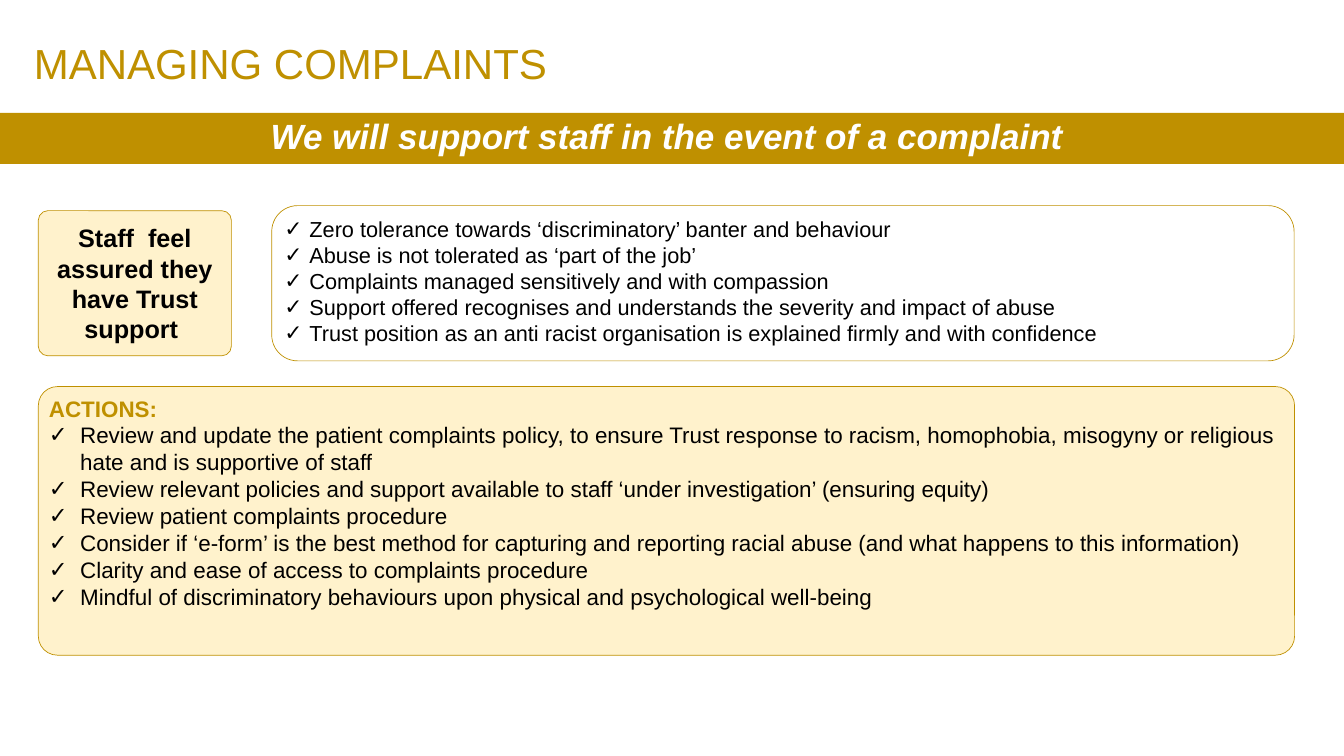
from lxml import etree
from pptx import Presentation
from pptx.dml.color import RGBColor
from pptx.enum.shapes import MSO_SHAPE
from pptx.enum.text import MSO_ANCHOR, PP_ALIGN
from pptx.oxml.ns import qn
from pptx.util import Inches, Pt

RECT, ROUND = MSO_SHAPE.RECTANGLE, MSO_SHAPE.ROUNDED_RECTANGLE
TOP, MIDDLE = MSO_ANCHOR.TOP, MSO_ANCHOR.MIDDLE
LEFT, CENTER = PP_ALIGN.LEFT, PP_ALIGN.CENTER

COLORS = {"gold": "BF9000", "cream": "FFF2CC", "black": "000000", "white": "FFFFFF"}
FONT = "Arial"

AIMS = [
    "Zero tolerance towards ‘discriminatory’ banter and behaviour",
    "Abuse is not tolerated as ‘part of the job’",
    "Complaints managed sensitively and with compassion",
    "Support offered recognises and understands the severity and impact of abuse",
    "Trust position as an anti racist organisation is explained firmly and with confidence",
]
ACTIONS = [
    "Review and update the patient complaints policy, to ensure Trust response to racism, "
    "homophobia, misogyny or religious hate and is supportive of staff",
    "Review relevant policies and support available to staff ‘under investigation’ (ensuring equity)",
    "Review patient complaints procedure",
    "Consider if ‘e-form’ is the best method for capturing and reporting racial abuse "
    "(and what happens to this information)",
    "Clarity and ease of access to complaints procedure",
    "Mindful of discriminatory behaviours upon physical and psychological well-being",
]


def color(name):
    return RGBColor.from_string(COLORS[name])


def add_run(para, text, size, ink="black", bold=False, italic=False):
    run = para.add_run()
    run.text = text
    font = run.font
    font.name, font.size = FONT, Pt(size)
    font.bold, font.italic = bold, italic
    font.color.rgb = color(ink)


def add_box(slide, kind, box, fill=None, line=None, round_by=None, anchor=MIDDLE):
    """Draw a panel and return its text frame."""
    shape = slide.shapes.add_shape(kind, *map(Inches, box))
    shape.shadow.inherit = False
    if round_by is not None:
        shape.adjustments[0] = round_by
    if fill:
        shape.fill.solid()
        shape.fill.fore_color.rgb = color(fill)
    else:
        shape.fill.background()
    if line:
        shape.line.color.rgb = color(line)
        shape.line.width = Pt(1)
    else:
        shape.line.fill.background()
    frame = shape.text_frame
    frame.word_wrap = True
    frame.vertical_anchor = anchor
    return frame


def add_ticks(frame, items, size, indent):
    """Fill the frame with ticked items, after any text already there."""
    for item in items:
        first = frame.paragraphs[0]
        para = frame.add_paragraph() if first.runs else first
        para.alignment = LEFT
        props = para._p.get_or_add_pPr()
        props.set("marL", str(Inches(indent)))
        props.set("indent", str(-Inches(indent)))
        etree.SubElement(props, qn("a:buFont"), typeface=FONT)
        etree.SubElement(props, qn("a:buChar"), char="✓")
        add_run(para, item, size)


def add_title(slide, text):
    title = slide.shapes.title
    title.left, title.top = Inches(0.57), Inches(0.28)
    title.width, title.height = Inches(25.3), Inches(2.05)
    frame = title.text_frame
    frame.word_wrap = True
    frame.vertical_anchor = MIDDLE
    para = frame.paragraphs[0]
    para.alignment = LEFT
    para.line_spacing = 0.9
    add_run(para, text, 60, "gold")


def main():
    deck = Presentation()
    deck.slide_width, deck.slide_height = Inches(26.66), Inches(15)
    slide = deck.slides.add_slide(deck.slide_layouts[5])

    # Actions panel
    frame = add_box(slide, ROUND, (0.76, 7.67, 24.92, 5.33), "cream", "gold", 0.071, TOP)
    head = frame.paragraphs[0]
    head.alignment = LEFT
    add_run(head, "ACTIONS:", 32, "gold", bold=True)
    add_ticks(frame, ACTIONS, 32, 0.62)

    # Aims panel
    frame = add_box(slide, ROUND, (5.39, 4.08, 20.28, 3.08), line="gold", anchor=TOP)
    add_ticks(frame, AIMS, 31, 0.5)

    # Outcome card
    frame = add_box(slide, ROUND, (0.76, 4.18, 3.83, 2.88), "cream", "gold", 0.066)
    para = frame.paragraphs[0]
    para.alignment = CENTER
    add_run(para, "Staff  feel assured they have Trust support ", 36, bold=True)

    # Title and banner
    add_title(slide, "MANAGING COMPLAINTS")
    frame = add_box(slide, RECT, (0, 2.24, 26.66, 1.01), "gold")
    para = frame.paragraphs[0]
    para.alignment = CENTER
    para.line_spacing = 0.9
    add_run(para, "We will support staff in the event of a complaint ", 50, "white", True, True)

    deck.save("out.pptx")


if __name__ == "__main__":
    main()
